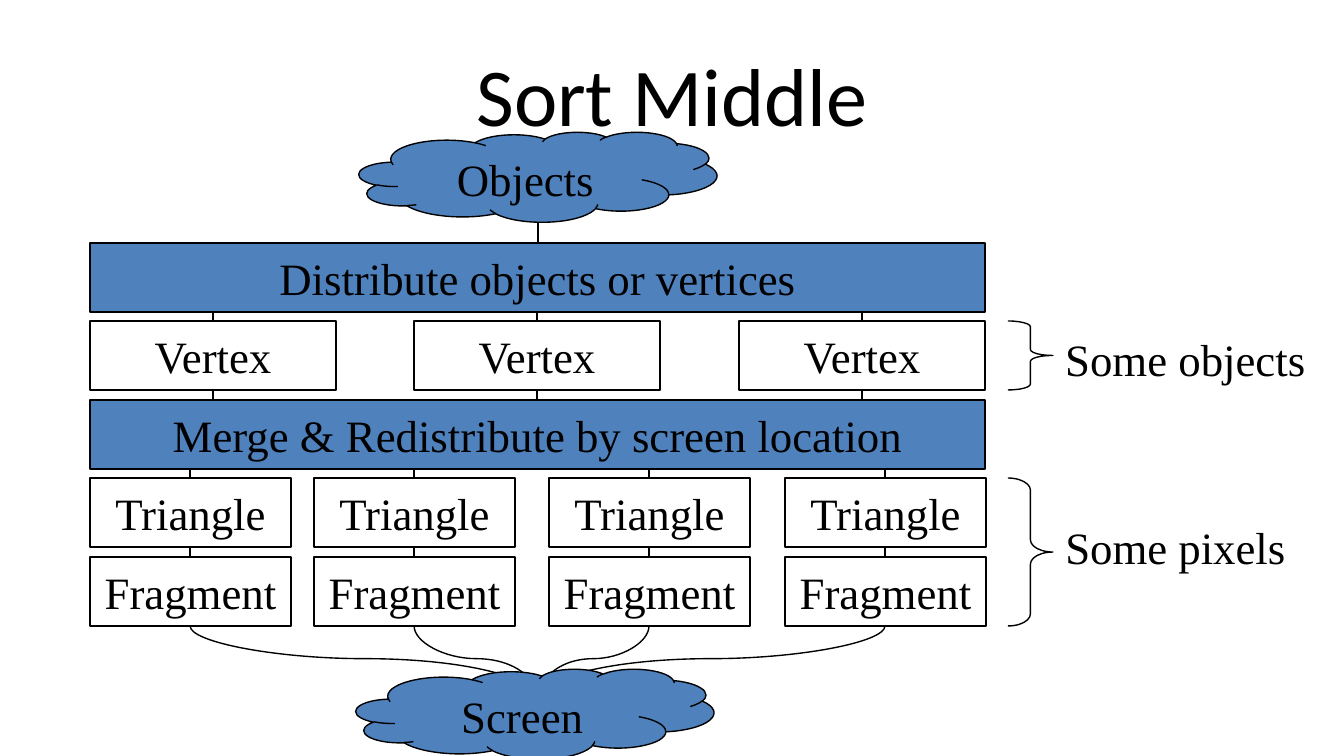
from lxml import etree
from pptx import Presentation
from pptx import util as u
from pptx.dml.color import RGBColor
from pptx.enum import shapes, text
from pptx.oxml.ns import qn

BLACK = RGBColor(0x00, 0x00, 0x00)
BLUE = RGBColor(0x4F, 0x81, 0xBD)
SCALE = 914400 / 134.4
SHAPE = shapes.MSO_SHAPE
MIDDLE = text.MSO_ANCHOR.MIDDLE
TOP = text.MSO_ANCHOR.TOP
CENTER = text.PP_ALIGN.CENTER
LEFT = text.PP_ALIGN.LEFT


def px(*values):
    return [u.Emu(round(v * SCALE)) for v in values]


def put_text(sp, words, size=24, font="Times New Roman", align=CENTER,
             anchor=MIDDLE, wrap=True):
    tf = sp.text_frame
    tf.word_wrap = wrap
    tf.vertical_anchor = anchor
    p = tf.paragraphs[0]
    p.alignment = align
    r = p.add_run()
    r.text = words
    r.font.size = u.Pt(size)
    r.font.name = font
    r.font.color.rgb = BLACK


class Diagram:
    def __init__(self, slide, line_width=0.75):
        self.slide = slide
        self.line_width = u.Pt(line_width)

    def outline(self, sp):
        sp.line.color.rgb = BLACK
        sp.line.width = self.line_width

    def title(self, words, x, y, w, h):
        sp = self.slide.shapes.title
        sp.left, sp.top, sp.width, sp.height = px(x, y, w, h)
        put_text(sp, words, size=44, font="Calibri")

    def shape(self, kind, x, y, w, h, fill=None):
        sp = self.slide.shapes.add_shape(kind, *px(x, y, w, h))
        sp.shadow.inherit = False
        if fill is None:
            sp.fill.background()
        else:
            sp.fill.solid()
            sp.fill.fore_color.rgb = fill
        self.outline(sp)
        return sp

    def box(self, words, x, y, w, h, fill=None):
        put_text(self.shape(SHAPE.RECTANGLE, x, y, w, h, fill), words)

    def cloud(self, words, x, y, w, h):
        put_text(self.shape(SHAPE.CLOUD, x, y, w, h, BLUE), words, anchor=TOP)

    def brace(self, x, y, w, h, curl):
        sp = self.shape(SHAPE.RIGHT_BRACE, x, y, w, h)
        sp.adjustments[0] = curl
        sp.adjustments[1] = 0.5

    def label(self, words, x, y, w, h):
        sp = self.slide.shapes.add_textbox(*px(x, y, w, h))
        put_text(sp, words, align=LEFT, anchor=TOP, wrap=False)

    def connector(self, kind, x1, y1, x2, y2):
        c = self.slide.shapes.add_connector(kind, *px(x1, y1, x2, y2))
        self.outline(c)
        etree.SubElement(c._element.spPr, qn("a:effectLst"))
        return c

    def link(self, x, y1, y2):
        self.connector(shapes.MSO_CONNECTOR.STRAIGHT, x, y1, x, y2)

    def curve(self, x1, y1, x2, y2, bend=46100):
        cx, cy = (x1 + x2) / 2, (y1 + y2) / 2
        half_w, half_h = (y2 - y1) / 2, abs(x2 - x1) / 2
        side = 1 if x2 > x1 else -1
        c = self.connector(shapes.MSO_CONNECTOR.CURVE,
                           cx + side * half_w, cy - half_h,
                           cx - side * half_w, cy + half_h)
        sp_pr = c._element.spPr
        turn = 270 if side > 0 else 90
        sp_pr.find(qn("a:xfrm")).set("rot", str(turn * 60000))
        guides = sp_pr.find(qn("a:prstGeom")).find(qn("a:avLst"))
        etree.SubElement(guides, qn("a:gd"), name="adj1", fmla=f"val {bend}")
        etree.SubElement(sp_pr.find(qn("a:ln")), qn("a:tailEnd"), type="triangle")


def main():
    prs = Presentation()
    prs.slide_width, prs.slide_height = px(1344, 756)
    d = Diagram(prs.slides.add_slide(prs.slide_layouts[5]))
    d.title("Sort Middle", 67, 31, 1210, 126)

    left, width, height, center = 90, 895, 69, 538
    distribute, vertex, merge, triangle, fragment = [
        243 + 157 * i // 2 for i in range(5)]
    vertex_w, stage_w = 246, 201
    vertex_lefts = [left + 649 * i // 2 for i in range(3)]
    stage_lefts = [90, 314, 549, 785]
    bottom = fragment + height

    d.link(center, 222, distribute)
    d.box("Distribute objects or vertices", left, distribute, width, height, BLUE)
    d.box("Merge & Redistribute by screen location", left, merge, width, height, BLUE)

    for x in vertex_lefts:
        mid = x + vertex_w // 2
        d.box("Vertex", x, vertex, vertex_w, height)
        d.link(mid, distribute + height, vertex)
        d.link(mid, vertex + height, merge)

    for x in stage_lefts:
        mid = x + stage_w // 2
        d.box("Triangle", x, triangle, stage_w, height)
        d.box("Fragment", x, fragment, stage_w, height)
        d.link(mid, merge + height, triangle)
        d.link(mid, triangle + height, fragment)
        d.curve(mid, bottom, center, 697)

    d.brace(1008, vertex, 45, height, 0.13)
    d.label("Some objects", 1052, 325, 267, 67)
    d.brace(1008, triangle, 45, bottom - triangle, 0.27)
    d.label("Some pixels", 1052, 513, 250, 67)

    d.cloud("Objects", 359, 132, 358, 90)
    d.cloud("Screen", 356, 669, 358, 90)
    prs.save("out.pptx")


if __name__ == "__main__":
    main()
